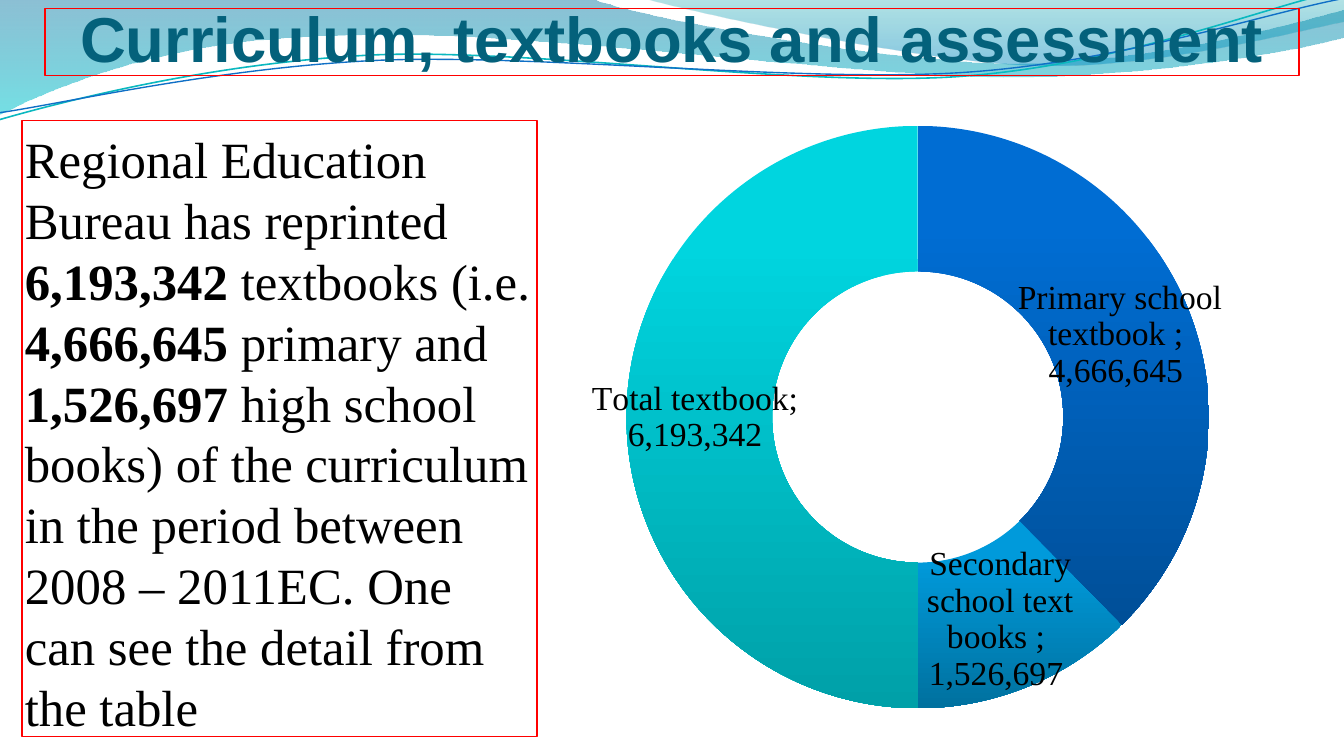
from dataclasses import dataclass

from lxml.etree import SubElement
from pptx import Presentation
from pptx.chart.data import CategoryChartData as ChartData
from pptx.dml.color import RGBColor as Rgb
from pptx.enum.chart import XL_CHART_TYPE as Kind
from pptx.enum.text import MSO_ANCHOR as Anchor
from pptx.enum.text import MSO_AUTO_SIZE as Fit
from pptx.enum.text import PP_ALIGN as Align
from pptx.oxml.ns import qn
from pptx.util import Cm, Pt


@dataclass(frozen=True)
class Theme:
    head: str = "04617B"
    ink: str = "000000"
    frame: str = "FF0000"
    sans: str = "Arial"
    serif: str = "Times New Roman"
    head_size: float = 34
    body_size: float = 27.2
    label_size: float = 18


@dataclass(frozen=True)
class Stop:
    place: float
    color: str
    alpha: int = 100


@dataclass(frozen=True)
class Wave:
    """A band when it has stops, else a line; legs hold 2 or 6 numbers in cm."""
    start: tuple
    legs: tuple
    stops: tuple = ()
    color: str = ""
    width: float = 0


@dataclass(frozen=True)
class Slice:
    name: str
    count: int
    top: str
    base: str


THEME = Theme()
FORMAT = r'_(* #,##0_);_(* \(#,##0\);_(* "-"??_);_(@_)'

WAVES = (
    Wave((0, 0), (
        (11.18, -0.03),
        (12.09, 0.33, 16.87, 1.19, 19.25, 1.19),
        (21.67, 1.19, 24.33, 0.48, 25.4, 0.18),
        (25.43, 0.69),
        (24.97, 0.84, 22.1, 1.45, 18.95, 1.45),
        (15.8, 1.42, 9.7, 0.53, 6.53, 0.66),
        (3.28, 0.69, 1.17, 1.57, -0.03, 2.16),
    ), stops=(Stop(0, "0074A1", 45), Stop(1, "00C6CF", 55))),
    Wave((12.17, -0.03), (
        (12.93, 0.2, 17.32, 1.17, 19.53, 1.24),
        (21.74, 1.32, 24.41, 0.61, 25.4, 0.41),
        (25.4, 0),
    ), stops=(Stop(0, "00A1A9", 30), Stop(0.8, "008BBF", 45))),
    Wave((0, 2.26), (
        (1.22, 1.91, 4.01, 1.19, 7.04, 1.04),
        (10.06, 0.91, 15.04, 1.65, 18.08, 1.45),
        (21.16, 1.24, 23.85, 0.15, 25.35, -0.18),
    ), color="0AB8BF", width=0.85),
    Wave((0, 2.13), (
        (1.19, 1.96, 4.17, 1.27, 7.19, 1.14),
        (10.24, 1.02, 15.16, 1.57, 18.21, 1.37),
        (21.23, 1.17, 23.9, 0.25, 25.4, -0.03),
    ), color="0F6FC6", width=0.75),
)

SLICES = (
    Slice("Primary school textbook ", 4666645, "006DD3", "004F98"),
    Slice("Secondary school text books ", 1526697, "009ADB", "00719F"),
    Slice("Total textbook", 6193342, "00D5DF", "00A0A8"),
)

BODY = (
    ("Regional Education Bureau has reprinted ", False),
    ("6,193,342", True),
    (" textbooks (i.e. ", False),
    ("4,666,645", True),
    (" primary and ", False),
    ("1,526,697", True),
    (" high school books) of the curriculum in the period between "
     "2008 – 2011EC. One can see the detail from the table", False),
)


def bend(shape, legs: tuple) -> None:
    """Join each three segments of a six-number leg into one Bezier curve."""
    lines = iter(shape.element.findall(".//" + qn("a:lnTo")))
    for leg in legs:
        group = [next(lines) for _ in range(len(leg) // 2)]
        if len(group) == 3:
            curve = SubElement(group[0].getparent(), qn("a:cubicBezTo"))
            group[0].addprevious(curve)
            for line in group:
                curve.append(line[0])
                line.getparent().remove(line)


def shade(fill, stops: tuple) -> None:
    """Fill from top to bottom."""
    fill.gradient()
    fill.gradient_angle = 270
    for mark, stop in zip(fill.gradient_stops, stops):
        mark.position = stop.place
        mark.color.rgb = Rgb.from_string(stop.color)


def rule(line, color: str, width: float) -> None:
    line.color.rgb = Rgb.from_string(color)
    line.width = Pt(width)


def style(font, face: str, size: float, color: str, bold: bool = False) -> None:
    font.name, font.size, font.bold = face, Pt(size), bold
    font.color.rgb = Rgb.from_string(color)


def place(shape, left: float, top: float, width: float, height: float) -> None:
    shape.left, shape.top = Cm(left), Cm(top)
    shape.width, shape.height = Cm(width), Cm(height)


def frame(shape, anchor, sides: float, top: float, base: float):
    rule(shape.line, THEME.frame, 0.75)
    text = shape.text_frame
    text.word_wrap, text.auto_size = True, Fit.NONE
    text.vertical_anchor = anchor
    text.margin_left = text.margin_right = Cm(sides)
    text.margin_top, text.margin_bottom = Cm(top), Cm(base)
    return text


def draw_wave(slide, wave: Wave) -> None:
    pen = slide.shapes.build_freeform(*map(Cm, wave.start), scale=1.0)
    knots = [(Cm(leg[i]), Cm(leg[i + 1]))
             for leg in wave.legs for i in range(0, len(leg), 2)]
    pen.add_line_segments(knots, close=bool(wave.stops))
    shape = pen.convert_to_shape()
    bend(shape, wave.legs)
    shape.shadow.inherit = False
    if wave.stops:
        shade(shape.fill, wave.stops)
        shape.line.fill.background()
        for tint, stop in zip(shape.element.iter(qn("a:srgbClr")), wave.stops):
            SubElement(tint, qn("a:alpha")).set("val", str(stop.alpha * 1000))
    else:
        shape.fill.background()
        rule(shape.line, wave.color, wave.width)


def draw_title(slide) -> None:
    title = slide.shapes.title
    title.element.getparent().append(title.element)
    place(title, 0.85, 0.16, 23.7, 1.27)
    text = frame(title, Anchor.BOTTOM, 0, 0.13, 0)
    text.text = "Curriculum, textbooks and assessment"
    line = text.paragraphs[0]
    line.alignment = Align.CENTER
    style(line.runs[0].font, THEME.sans, THEME.head_size, THEME.head, True)


def draw_body(slide) -> None:
    box = slide.shapes.add_textbox(Cm(0.42), Cm(2.28), Cm(9.73), Cm(11.64))
    para = frame(box, Anchor.TOP, 0.05, 0.13, 0.13).paragraphs[0]
    for words, bold in BODY:
        run = para.add_run()
        run.text = words
        style(run.font, THEME.serif, THEME.body_size, THEME.ink, bold)


def set_plot(chart, **spans: float) -> None:
    """Fix the inner plot area as shares of the chart."""
    area = chart.element.find(".//" + qn("c:plotArea"))
    for old in area.findall(qn("c:layout")):
        area.remove(old)
    layout = SubElement(area, qn("c:layout"))
    area.insert(0, layout)
    manual = SubElement(layout, qn("c:manualLayout"))
    modes = {"layoutTarget": "inner", "xMode": "edge", "yMode": "edge"}
    for tag, value in (modes | spans).items():
        SubElement(manual, qn("c:" + tag)).set("val", str(value))


def draw_chart(slide) -> None:
    data = ChartData(number_format=FORMAT)
    data.categories = [s.name for s in SLICES]
    data.add_series("Series 1", [s.count for s in SLICES])
    wide, high = 15.04, 11.86
    chart = slide.shapes.add_chart(Kind.DOUGHNUT, Cm(9.93), Cm(2.06),
                                   Cm(wide), Cm(high), data).chart
    chart.has_title = chart.has_legend = False
    style(chart.font, THEME.serif, THEME.label_size, THEME.ink)
    set_plot(chart, x=1.91 / wide, y=0, w=11.01 / wide, h=11.65 / high)
    chart.plots[0].vary_by_categories = True
    ring = chart.plots[0].series[0]
    for index, part in enumerate(SLICES):
        look = ring.points[index].format
        shade(look.fill, (Stop(0.2, part.top), Stop(1, part.base)))
        look.line.fill.background()
    labels = ring.data_labels
    labels.show_value = labels.show_category_name = True
    labels.show_percentage = False
    labels.number_format, labels.number_format_is_linked = FORMAT, False
    style(labels.font, THEME.serif, THEME.label_size, THEME.ink)
    last = chart.element.find(".//" + qn("c:ser")).find(".//" + qn("c:showBubbleSize"))
    mark = SubElement(last.getparent(), qn("c:separator"))
    mark.text = "; "
    last.addnext(mark)


def main() -> None:
    deck = Presentation()
    deck.slide_width, deck.slide_height = Cm(25.4), Cm(14.29)
    slide = deck.slides.add_slide(deck.slide_layouts[5])
    for wave in WAVES:
        draw_wave(slide, wave)
    draw_title(slide)
    draw_body(slide)
    draw_chart(slide)
    deck.save("out.pptx")


if __name__ == "__main__":
    main()
